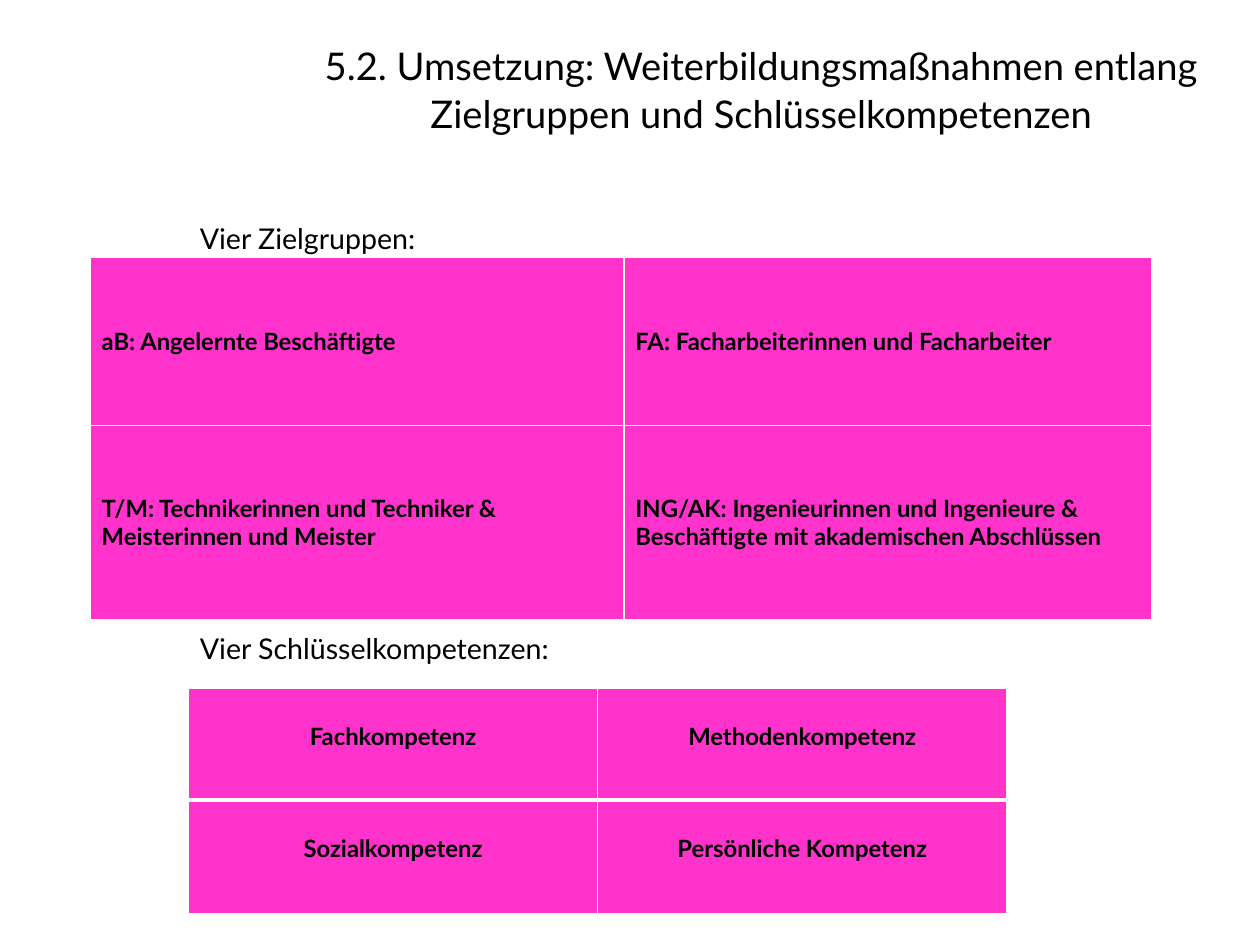
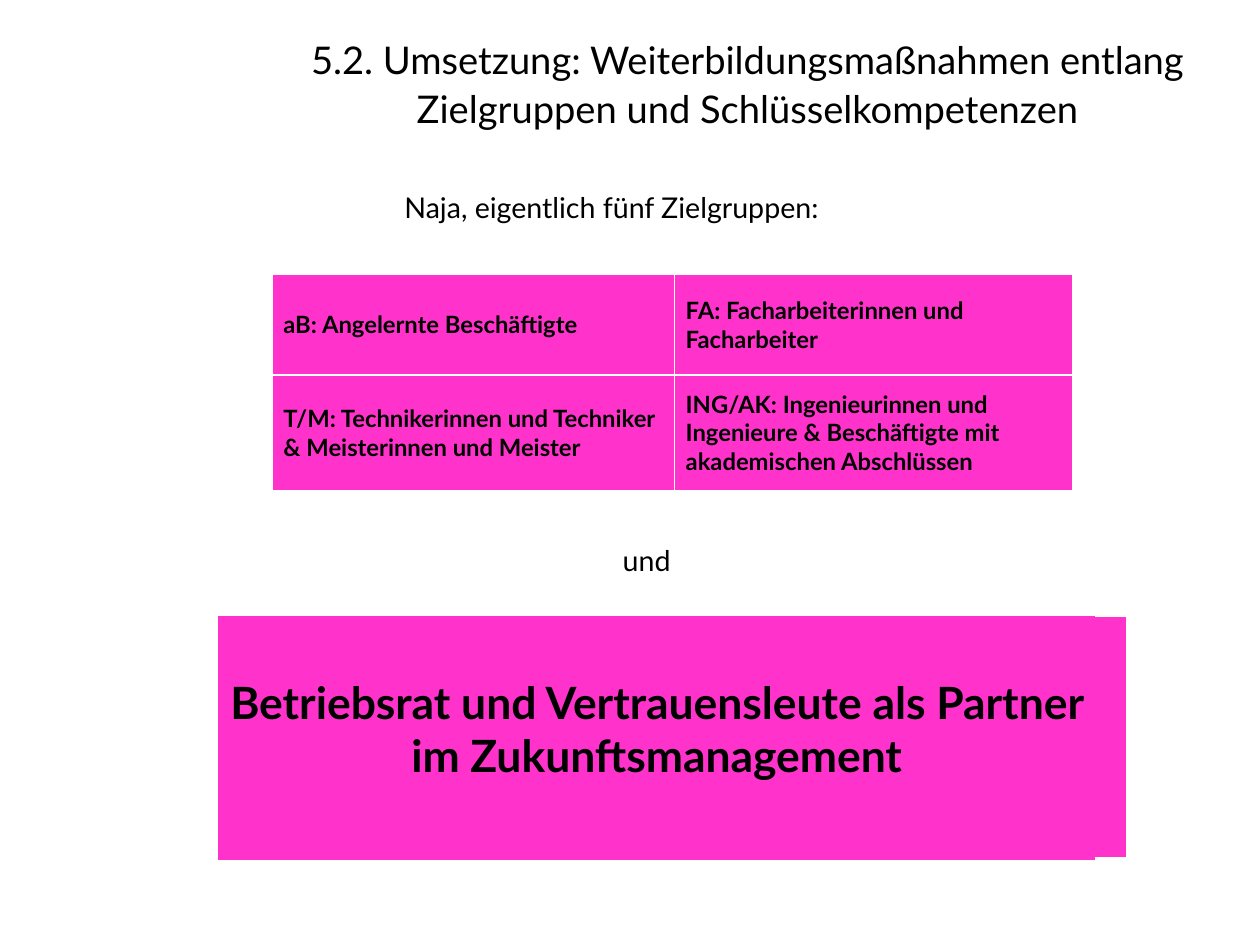
from lxml.etree import SubElement
from pptx import Presentation
from pptx.dml.color import RGBColor
from pptx.enum.text import MSO_ANCHOR as Anchor, PP_ALIGN as Align
from pptx.oxml.ns import qn
from pptx.util import Emu, Inches, Pt

SLIDE_SIZE = Emu(10080625), Emu(7559675)  # the 28 by 21 cm screen format
FONT = "Lato"
BLACK, WHITE, PINK = "000000", "FFFFFF", "FF33CC"
TITLE = "5.2. Umsetzung: Weiterbildungsmaßnahmen entlang\vZielgruppen und Schlüsselkompetenzen"
TITLE_SIZE = (8.6, 1.14)

TARGET_GROUPS = [
    ["aB: Angelernte Beschäftigte", "FA: Facharbeiterinnen und Facharbeiter"],
    ["T/M: Technikerinnen und Techniker & Meisterinnen und Meister",
     "ING/AK: Ingenieurinnen und Ingenieure & Beschäftigte mit akademischen Abschlüssen"],
]
COMPETENCES = [
    ["Fachkompetenz", "Methodenkompetenz"],
    ["Sozialkompetenz", "Persönliche Kompetenz"],
]
PARTNERS = [["Betriebsrat und Vertrauensleute als Partner im Zukunftsmanagement", ""]]

THIN = dict(L=1, R=1, T=1, B=1)
THICK_BASE = dict(THIN, B=3)
NO_LINES = dict(L=0, R=0, T=0, B=0)
GROUP_BORDERS = [[THIN] * 2] * 2
COMPETENCE_BORDERS = [[THICK_BASE] * 2, [dict(THIN, T=3)] * 2]
PARTNER_BORDERS = [[NO_LINES, dict(THICK_BASE, L=0)]]

SLIDES = [
    dict(
        title_at=(2.36, 0.2),
        labels=[("Vier Zielgruppen:", (1.65, 1.8, 3.23, 0.45)),
                ("Vier Schlüsselkompetenzen:", (1.65, 5.39, 4.49, 0.45))],
        tables=[
            dict(rows=TARGET_GROUPS, at=(0.79, 2.25), widths=(4.67, 4.62),
                 heights=(1.47, 1.7), borders=GROUP_BORDERS),
            dict(rows=COMPETENCES, at=(1.65, 6.02), widths=(3.58, 3.58),
                 heights=(0.98, 0.99), borders=COMPETENCE_BORDERS, top_margin=0.3),
        ],
    ),
    dict(
        title_at=(2.24, 0.15),
        labels=[("Naja, eigentlich fünf Zielgruppen:", (3.44, 1.53, 4.88, 0.49)),
                ("und", (5.35, 4.62, 1.32, 0.49))],
        tables=[
            dict(rows=TARGET_GROUPS, at=(2.38, 2.4), widths=(3.52, 3.49),
                 heights=(0.88, 1.01), borders=GROUP_BORDERS),
            dict(rows=PARTNERS, at=(1.91, 5.39), widths=(7.67, 0.28),
                 heights=(2.13,), borders=PARTNER_BORDERS, size=28, top_margin=0.52),
        ],
    ),
]


def color(value):
    return RGBColor.from_string(value)


def write(frame, text, size, bold=False, align=Align.LEFT, spacing=1.0):
    frame.word_wrap = True
    frame.text = text
    para = frame.paragraphs[0]
    para.alignment = align
    para.line_spacing = spacing
    para.font.size = Pt(size)
    for span in para.runs:
        span.font.name = FONT
        span.font.size = Pt(size)
        span.font.bold = bold
        span.font.color.rgb = color(BLACK)


def add_text(slide, text, at, size, **style):
    box = slide.shapes.add_textbox(*map(Inches, at))
    write(box.text_frame, text, size, **style)
    return box.text_frame


def add_title(slide, left_top):
    frame = add_text(slide, TITLE, left_top + TITLE_SIZE, 24,
                     align=Align.CENTER, spacing=1.06)
    frame.vertical_anchor = Anchor.MIDDLE
    frame.margin_left = frame.margin_right = frame.margin_top = frame.margin_bottom = 0


def set_borders(cell, widths):
    """Draw white cell edges; a width of 0 hides the edge."""
    properties = cell._tc.get_or_add_tcPr()
    for side, width in widths.items():
        line = SubElement(properties, qn(f"a:ln{side}"), w=str(Pt(width)))
        if width:
            fill = SubElement(line, qn("a:solidFill"))
            SubElement(fill, qn("a:srgbClr"), val=WHITE)
        else:
            SubElement(line, qn("a:noFill"))


def add_grid(slide, rows, at, widths, heights, borders, size=15, top_margin=None):
    """With a top margin the text is centred across and hangs from the top."""
    extent = (sum(widths), sum(heights))
    table = slide.shapes.add_table(len(rows), len(widths), *map(Inches, at + extent)).table
    table.first_row = table.horz_banding = False
    for column, width in zip(table.columns, widths):
        column.width = Inches(width)
    for row, height, texts, edges in zip(table.rows, heights, rows, borders):
        row.height = Inches(height)
        for cell, text, edge in zip(row.cells, texts, edges):
            set_borders(cell, edge)
            cell.fill.solid()
            cell.fill.fore_color.rgb = color(PINK)
            if top_margin is None:
                align, cell.vertical_anchor = Align.LEFT, Anchor.MIDDLE
            else:
                align, cell.vertical_anchor = Align.CENTER, Anchor.TOP
                cell.margin_top = Inches(top_margin)
            write(cell.text_frame, text, size, bold=True, align=align)


def main():
    deck = Presentation()
    deck.slide_width, deck.slide_height = SLIDE_SIZE
    for content in SLIDES:
        slide = deck.slides.add_slide(deck.slide_layouts[6])
        add_title(slide, content["title_at"])
        for table in content["tables"]:
            add_grid(slide, **table)
        for text, at in content["labels"]:
            add_text(slide, text, at, 18, spacing=1.27)
    deck.save("out.pptx")


if __name__ == "__main__":
    main()
